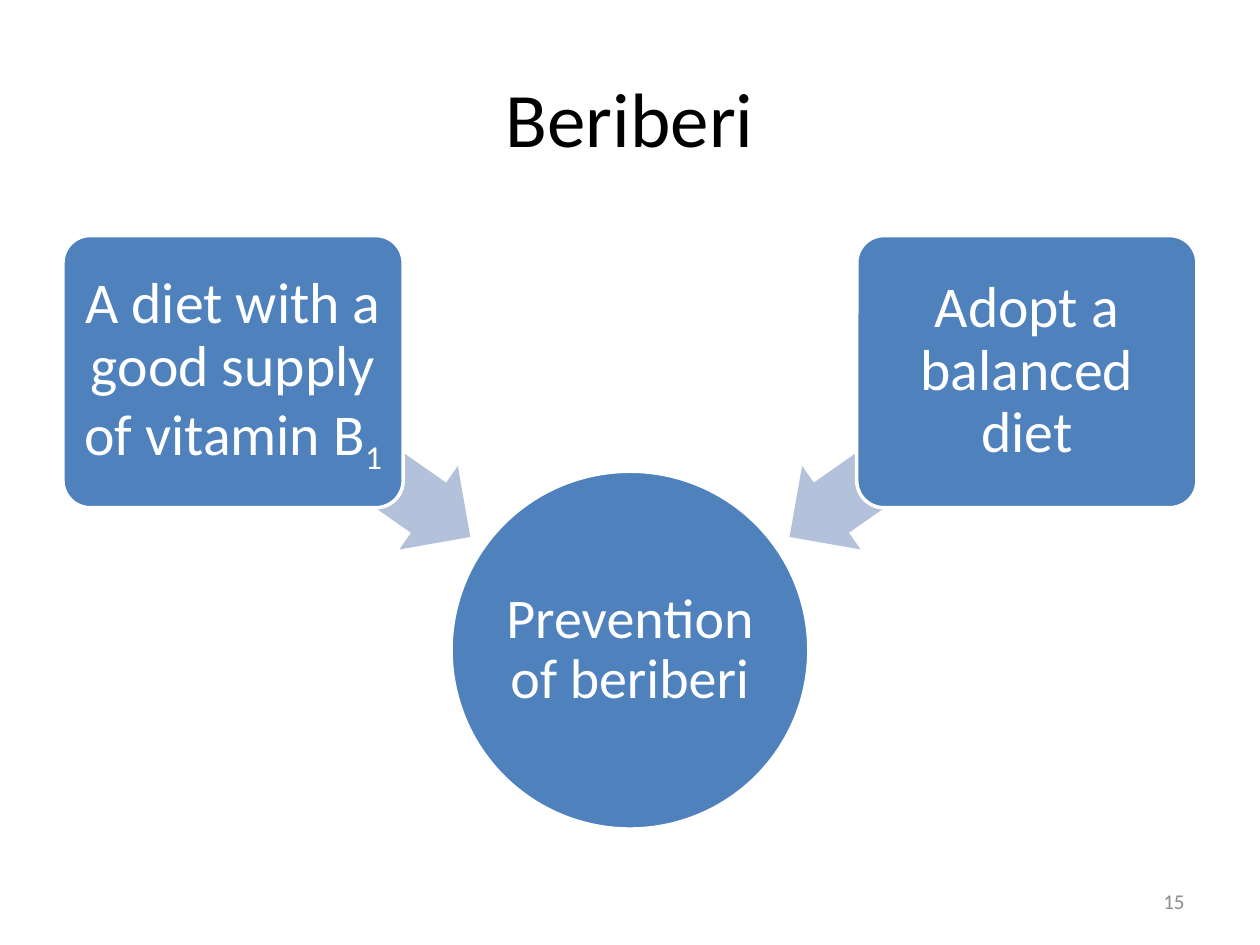
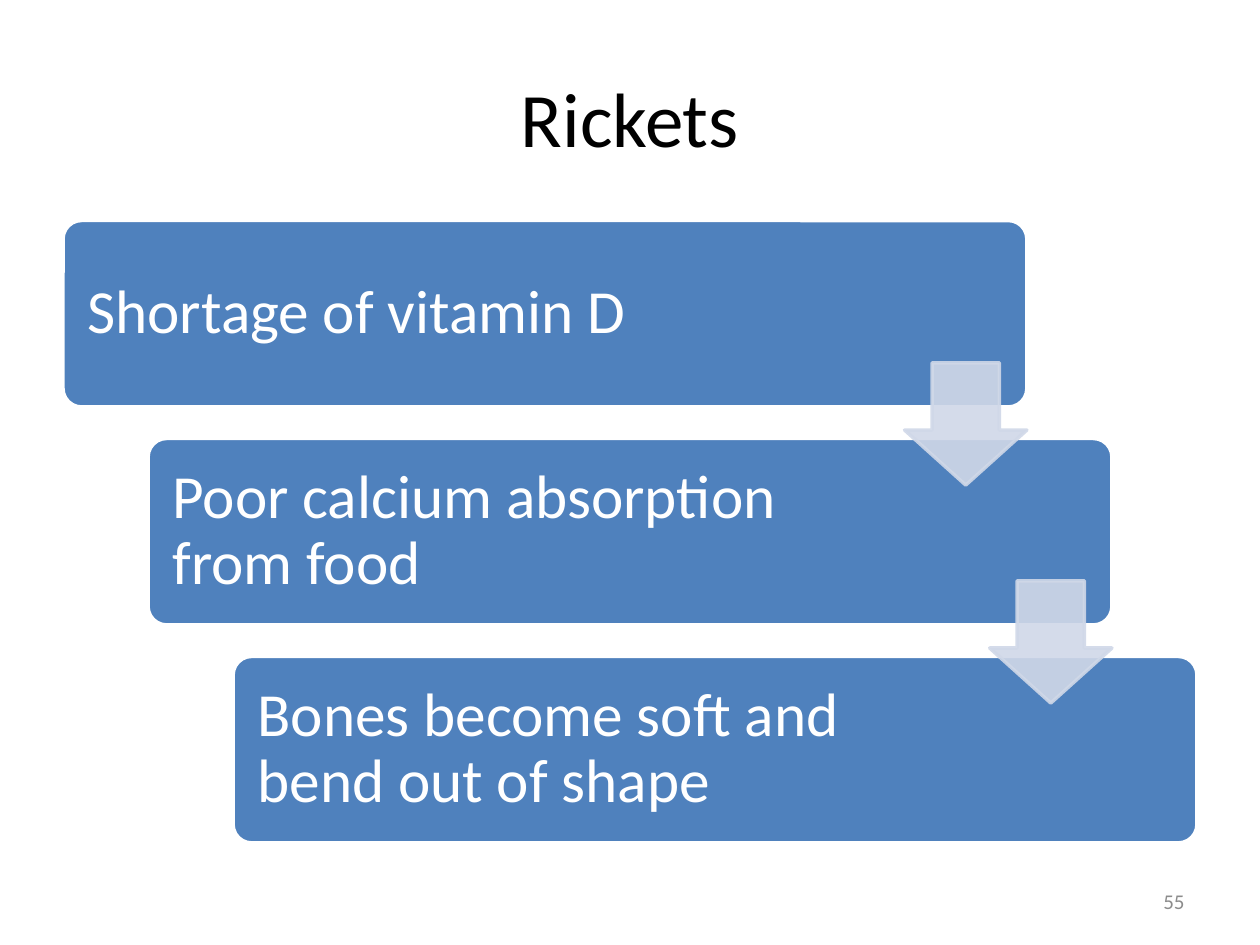
from dataclasses import dataclass

from lxml import etree
from pptx import Presentation
from pptx.dml.color import RGBColor
from pptx.enum.shapes import MSO_SHAPE
from pptx.enum.text import MSO_ANCHOR, PP_ALIGN
from pptx.oxml.ns import qn
from pptx.util import Inches, Pt

ROUNDED = MSO_SHAPE.ROUNDED_RECTANGLE
ELLIPSE = MSO_SHAPE.OVAL
LEFT_ARROW = MSO_SHAPE.LEFT_ARROW
DOWN_ARROW = MSO_SHAPE.DOWN_ARROW
MIDDLE = MSO_ANCHOR.MIDDLE
LEFT, CENTER, RIGHT = PP_ALIGN.LEFT, PP_ALIGN.CENTER, PP_ALIGN.RIGHT

WIDTH, HEIGHT = Inches(10), Inches(7.5)
COLUMNS, ROWS = 100, 75
FONT = "Calibri"
BLUE, PALE, MIST = "4F81BD", "B3C1DB", "D0D8E8"
WHITE, BLACK, GREY = "FFFFFF", "000000", "8C8C8C"


@dataclass(frozen=True)
class Area:
    left: float
    top: float
    width: float
    height: float

    def mirrored(self) -> "Area":
        return Area(COLUMNS - self.left - self.width, self.top, self.width, self.height)

    def shifted(self, columns: float, rows: float) -> "Area":
        return Area(self.left + columns, self.top + rows, self.width, self.height)

    def lengths(self) -> tuple:
        return across(self.left), down(self.top), across(self.width), down(self.height)


@dataclass(frozen=True)
class TextStyle:
    size: float
    color: str = WHITE
    align: PP_ALIGN = CENTER
    spacing: float = 0.9
    inset: float = 0.7
    right_inset: float = 0.7


@dataclass(frozen=True)
class Span:
    text: str
    subscript: bool = False


@dataclass(frozen=True)
class Look:
    kind: MSO_SHAPE
    fill: str
    adjustments: tuple = ()
    outline: str = ""
    opacity: int = 100


TITLE_AREA = Area(5, 3, 90, 12.5)
NUMBER_AREA = Area(71.7, 69.5, 23.3, 4)
TITLE = TextStyle(44, BLACK, CENTER, 1, 1, 1)
NUMBER = TextStyle(12, GREY, RIGHT, 1, 1, 1)
GOAL = TextStyle(32, inset=0.2, right_inset=0.2)
FACTOR = TextStyle(33)
STEP = TextStyle(35, align=LEFT, inset=1.5, right_inset=17.9)

CARD = Look(ROUNDED, BLUE, (0.1,), WHITE)
DISC = Look(ELLIPSE, BLUE, (), WHITE)
POINTER = Look(LEFT_ARROW, PALE, (0.6, 0.5))
DROP = Look(DOWN_ARROW, MIST, (0.55, 0.45), MIST, 90)


def across(columns: float) -> int:
    return round(WIDTH * columns / COLUMNS)


def down(rows: float) -> int:
    return round(HEIGHT * rows / ROWS)


def rgb(value: str) -> RGBColor:
    return RGBColor.from_string(value)


def write(box, spans: list[Span], style: TextStyle) -> None:
    frame = box.text_frame
    frame.word_wrap = True
    frame.vertical_anchor = MIDDLE
    frame.margin_left = across(style.inset)
    frame.margin_right = across(style.right_inset)
    frame.margin_top = frame.margin_bottom = down(min(style.inset, 0.7))
    para = frame.paragraphs[0]
    para.alignment = style.align
    para.line_spacing = style.spacing
    for span in spans:
        run = para.add_run()
        run.text = span.text
        run.font.name = FONT
        run.font.size = Pt(style.size)
        run.font.color.rgb = rgb(style.color)
        if span.subscript:
            run.font._element.set("baseline", "-25000")


def draw(page, area: Area, look: Look, rotation: float = 0):
    shape = page.shapes.add_shape(look.kind, *area.lengths())
    shape.shadow.inherit = False
    shape.rotation = rotation
    for index, value in enumerate(look.adjustments):
        shape.adjustments[index] = value
    shape.fill.solid()
    shape.fill.fore_color.rgb = rgb(look.fill)
    if look.outline:
        shape.line.color.rgb = rgb(look.outline)
        shape.line.width = Pt(2)
    else:
        shape.line.fill.background()
    if look.opacity < 100:
        for color in shape._element.spPr.iter(qn("a:srgbClr")):
            etree.SubElement(color, qn("a:alpha")).set("val", str(look.opacity * 1000))
    return shape


def add_page(deck, title: str, number: int):
    page = deck.slides.add_slide(deck.slide_layouts[6])
    labels = ((TITLE_AREA, title, TITLE), (NUMBER_AREA, str(number), NUMBER))
    for area, text, style in labels:
        write(page.shapes.add_textbox(*area.lengths()), [Span(text)], style)
    return page


def add_beriberi(deck) -> None:
    page = add_page(deck, "Beriberi", 15)
    write(draw(page, Area(35.8, 37.4, 28.4, 28.4), DISC), [Span("Prevention of beriberi")], GOAL)
    pointer = Area(16.5, 32, 22.9, 8.1)
    card = Area(5, 18.7, 27, 21.6)
    supply = [Span("A diet with a good supply of vitamin B"), Span("1", subscript=True)]
    balance = [Span("Adopt a balanced diet")]
    factors = (
        (pointer, 215, card, supply),
        (pointer.mirrored(), 325, card.mirrored(), balance),
    )
    for arrow_area, rotation, card_area, spans in factors:
        draw(page, arrow_area, POINTER, rotation)
        write(draw(page, card_area, CARD), spans, FACTOR)


def add_rickets(deck) -> None:
    page = add_page(deck, "Rickets", 55)
    steps = (
        "Shortage of vitamin D",
        "Poor calcium absorption from food",
        "Bones become soft and bend out of shape",
    )
    card = Area(5, 17.5, 76.5, 14.8)
    drop = Area(71.8, 28.8, 9.7, 9.7)
    column_step, row_step = 6.75, 17.3
    for index, text in enumerate(steps):
        area = card.shifted(index * column_step, index * row_step)
        write(draw(page, area, CARD), [Span(text)], STEP)
    for index in range(len(steps) - 1):
        draw(page, drop.shifted(index * column_step, index * row_step), DROP)


def main() -> None:
    deck = Presentation()
    deck.slide_width, deck.slide_height = WIDTH, HEIGHT
    add_beriberi(deck)
    add_rickets(deck)
    deck.save("out.pptx")


if __name__ == "__main__":
    main()
